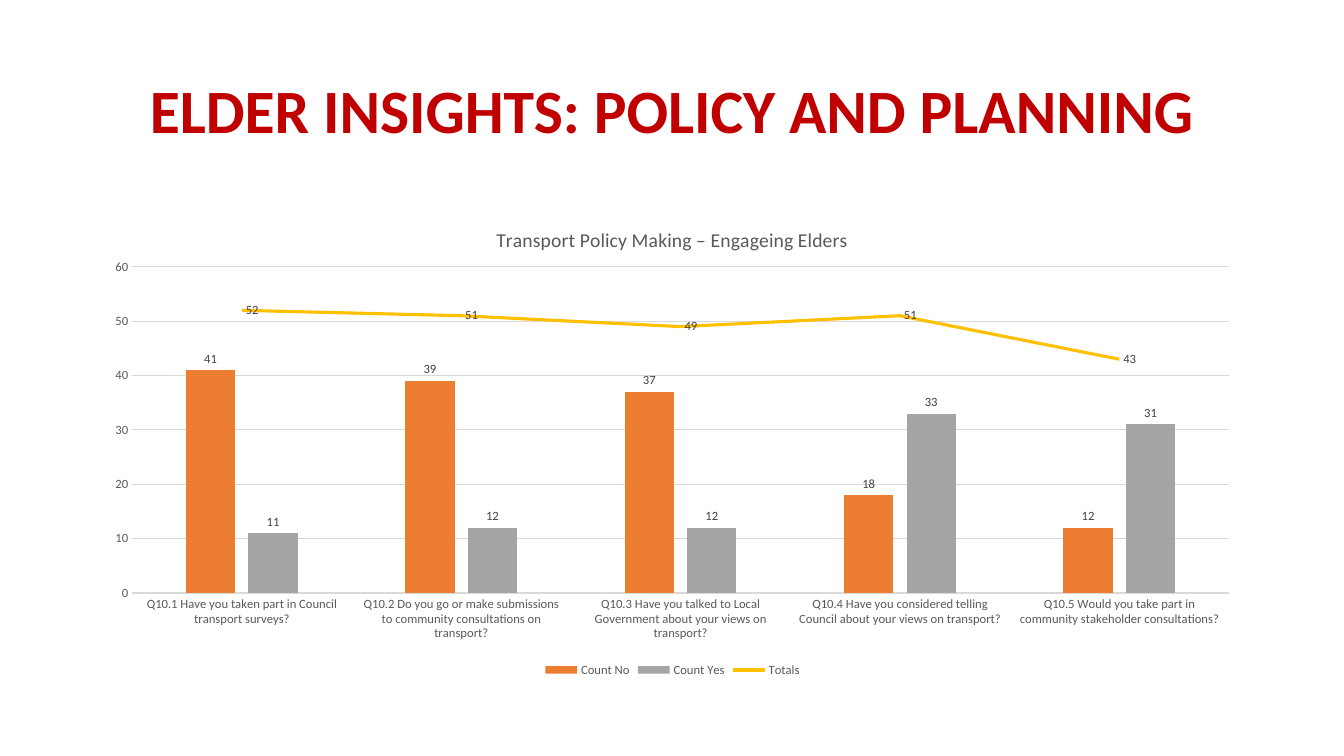
from lxml import etree
from pptx import Presentation
from pptx.chart.data import CategoryChartData
from pptx.dml.color import RGBColor
from pptx.enum.chart import (XL_CHART_TYPE, XL_LABEL_POSITION, XL_LEGEND_POSITION,
                             XL_MARKER_STYLE, XL_TICK_MARK)
from pptx.enum.text import MSO_ANCHOR, PP_ALIGN
from pptx.oxml import parse_xml
from pptx.oxml.ns import nsdecls, qn
from pptx.util import Pt

PX = 9144  # EMU per px, 100 px to the inch
CLUSTERED = XL_CHART_TYPE.COLUMN_CLUSTERED
OUTSIDE, RIGHT = XL_LABEL_POSITION.OUTSIDE_END, XL_LABEL_POSITION.RIGHT
LEGEND_BOTTOM = XL_LEGEND_POSITION.BOTTOM
NO_MARKER, NO_TICK = XL_MARKER_STYLE.NONE, XL_TICK_MARK.NONE
MIDDLE, CENTER = MSO_ANCHOR.MIDDLE, PP_ALIGN.CENTER

COLORS = {"title": "C00000", "text": "595959", "label": "404040", "grid": "D9D9D9",
          "Count No": "ED7D31", "Count Yes": "A5A5A5", "Totals": "FFC000"}
QUESTIONS = [
    "Q10.1 Have you taken part in Council transport surveys?",
    "Q10.2 Do you go or make submissions to community consultations on transport?",
    "Q10.3 Have you talked to Local Government about your views on transport?",
    "Q10.4 Have you considered telling Council about your views on transport?",
    "Q10.5 Would you take part in community stakeholder consultations?",
]
COUNTS = {"Count No": (41, 39, 37, 18, 12),
          "Count Yes": (11, 12, 12, 33, 31),
          "Totals": (52, 51, 49, 51, 43)}


def rgb(name):
    return RGBColor.from_string(COLORS[name])


def last_series_to_line(chart):
    """Move the last column series to a line plot on the same axes."""
    bars = chart.plots[0]._element
    ser = bars.findall(qn("c:ser"))[-1]
    for flag in ser.findall(qn("c:invertIfNegative")):
        ser.remove(flag)
    axes = "".join(f'<c:axId val="{a.get("val")}"/>' for a in bars.findall(qn("c:axId")))
    line = parse_xml(f'<c:lineChart {nsdecls("c")}><c:grouping val="standard"/>'
                     f'<c:varyColors val="0"/><c:marker val="1"/>{axes}</c:lineChart>')
    line.insert(2, ser)
    bars.addnext(line)


def set_layout(parent, after, inner=False, **fractions):
    """Place a chart part by fractions of the chart area."""
    for old in parent.findall(qn("c:layout")):
        parent.remove(old)
    layout = etree.Element(qn("c:layout"))
    manual = etree.SubElement(layout, qn("c:manualLayout"))
    if inner:
        etree.SubElement(manual, qn("c:layoutTarget"), val="inner")
    for mode in ("xMode", "yMode"):
        etree.SubElement(manual, qn(f"c:{mode}"), val="edge")
    for key, value in fractions.items():
        etree.SubElement(manual, qn(f"c:{key}"), val=str(value))
    if after is None:
        parent.insert(0, layout)
    else:
        after.addnext(layout)


class Deck:
    font = "Calibri"

    def __init__(self, width, height):
        self.prs = Presentation()
        self.prs.slide_width, self.prs.slide_height = width * PX, height * PX
        self.s = self.prs.slides.add_slide(self.prs.slide_layouts[6])

    def style(self, font, size, color, bold=False):
        font.name, font.size, font.bold = self.font, Pt(size), bold
        font.color.rgb = rgb(color)

    def heading(self, text, x, y, w, h):
        tf = self.s.shapes.add_textbox(x * PX, y * PX, w * PX, h * PX).text_frame
        tf.word_wrap, tf.vertical_anchor = True, MIDDLE
        p = tf.paragraphs[0]
        p.text, p.alignment, p.line_spacing = text, CENTER, 0.9
        self.style(p.font, 44, "title", bold=True)

    def combo_chart(self, title, x, y, w, h):
        data = CategoryChartData()
        data.categories = QUESTIONS
        for name, values in COUNTS.items():
            data.add_series(name, values)
        chart = self.s.shapes.add_chart(CLUSTERED, x * PX, y * PX, w * PX, h * PX, data).chart
        last_series_to_line(chart)
        self.style(chart.font, 10, "text")
        self.chart_title(chart, title)
        set_layout(chart._chartSpace.chart.plotArea, None, inner=True,
                   x=0.034, y=0.136, w=0.946, h=0.68)
        chart.has_legend = True
        chart.legend.position = LEGEND_BOTTOM
        chart.legend.include_in_layout = False
        self.style(chart.legend.font, 9, "text")
        self.axes(chart)

        columns, totals = chart.plots
        columns.gap_width, columns.overlap, columns.vary_by_categories = 219, -27, False
        for ser in columns.series:
            ser.format.fill.solid()
            ser.format.fill.fore_color.rgb = rgb(ser.name)
            self.labels(ser, OUTSIDE)
        for ser in totals.series:
            ser.format.line.color.rgb = rgb(ser.name)
            ser.format.line.width = Pt(2.25)
            ser.marker.style, ser.smooth = NO_MARKER, False
            self.labels(ser, RIGHT)

    def chart_title(self, chart, text):
        tf = chart.chart_title.text_frame
        tf.text = text
        self.style(tf.paragraphs[0].font, 14, "text")
        title = chart.chart_title._element
        set_layout(title, title.find(qn("c:tx")), x=0.345, y=0.043)

    def axes(self, chart):
        for axis in (chart.category_axis, chart.value_axis):
            axis.major_tick_mark = axis.minor_tick_mark = NO_TICK
            self.style(axis.tick_labels.font, 9, "text")
        value_axis = chart.value_axis
        value_axis.minimum_scale, value_axis.maximum_scale, value_axis.major_unit = 0, 60, 10
        value_axis.format.line.fill.background()
        for line in (chart.category_axis.format.line, value_axis.major_gridlines.format.line):
            line.color.rgb, line.width = rgb("grid"), Pt(0.75)

    def labels(self, ser, position):
        labels = ser.data_labels
        labels.show_value, labels.position = True, position
        self.style(labels.font, 9, "label")


def main():
    deck = Deck(1333, 750)
    deck.heading("ELDER INSIGHTS: POLICY AND PLANNING", 92, 40, 1150, 145)
    deck.combo_chart("Transport Policy Making – Engageing Elders", 92, 200, 1150, 476)
    deck.prs.save("out.pptx")


if __name__ == "__main__":
    main()
